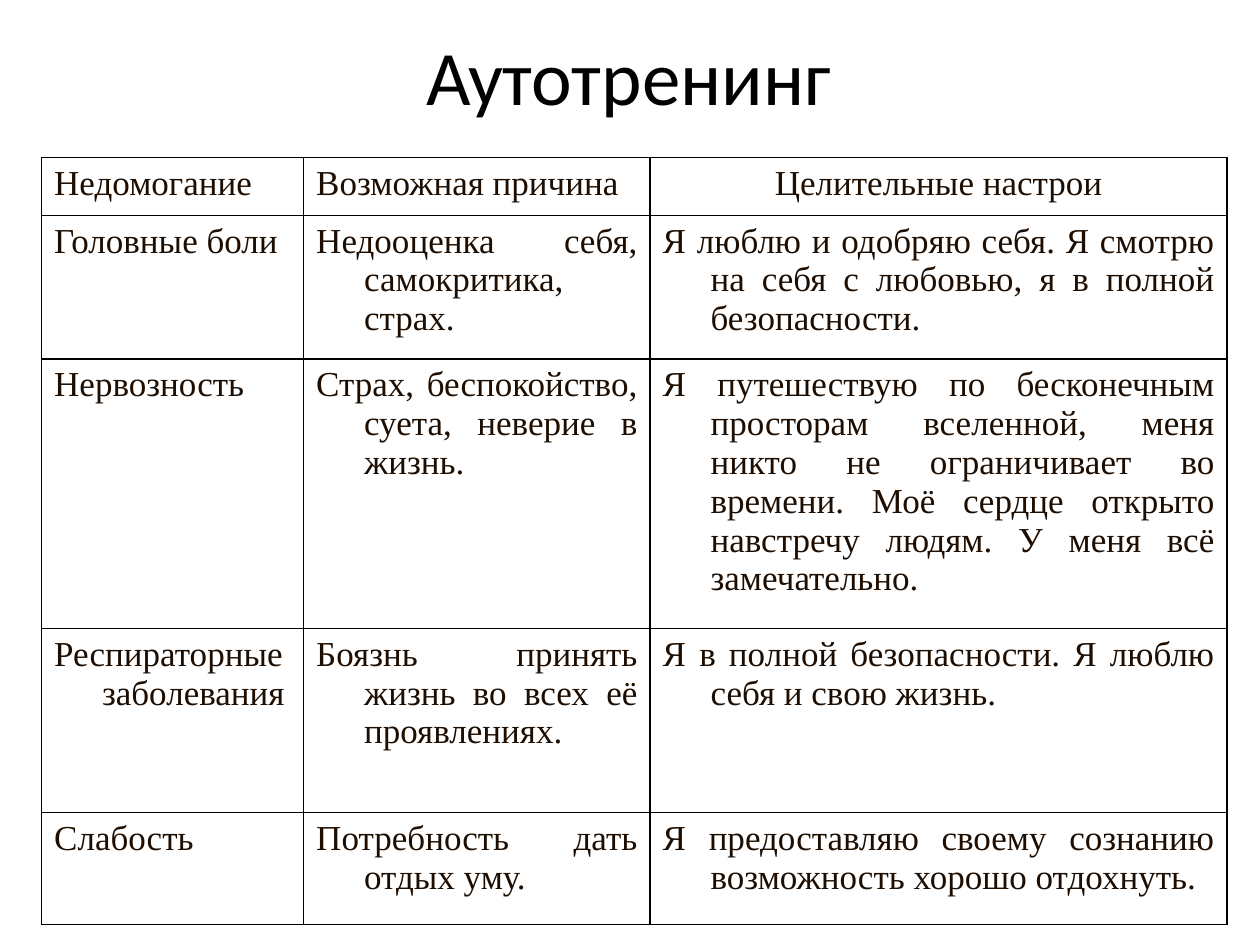
from typing import NamedTuple

from lxml.etree import SubElement
from pptx import Presentation
from pptx.dml.color import RGBColor
from pptx.enum.text import MSO_ANCHOR as Anchor, PP_ALIGN as Align
from pptx.oxml.ns import qn
from pptx.util import Inches, Pt

BLACK = RGBColor(0x00, 0x00, 0x00)
BROWN = RGBColor(0x1E, 0x0E, 0x01)
HANG = Inches(0.38)


class Row(NamedTuple):
    height: float
    ailment: str
    cause: str
    mantra: str


WIDTHS = (2.08, 2.75, 4.58)
ROWS = (
    Row(0.46, "Недомогание", "Возможная причина", "Целительные настрои"),
    Row(1.14, "Головные боли", "Недооценка себя, самокритика, страх.",
        "Я люблю и одобряю себя. Я смотрю на себя с любовью, "
        "я в полной безопасности."),
    Row(2.14, "Нервозность", "Страх, беспокойство, суета, неверие в жизнь.",
        "Я путешествую по бесконечным просторам вселенной, меня никто "
        "не ограничивает во времени. Моё сердце открыто навстречу людям. "
        "У меня всё замечательно."),
    Row(1.46, "Респираторные заболевания",
        "Боязнь принять жизнь во всех её проявлениях.",
        "Я в полной безопасности. Я люблю себя и свою жизнь."),
    Row(0.89, "Слабость", "Потребность дать отдых уму.",
        "Я предоставляю своему сознанию возможность хорошо отдохнуть."),
)


def style(par, name: str, size: int, color: RGBColor, align) -> None:
    par.alignment = align
    for run in par.runs:
        run.font.name = name
        run.font.size = Pt(size)
        run.font.color.rgb = color


def add_borders(cell) -> None:
    props = cell._tc.get_or_add_tcPr()
    for spot, side in enumerate(("lnL", "lnR", "lnT", "lnB")):
        line = SubElement(props, qn(f"a:{side}"), w=str(Pt(1)))
        fill = SubElement(line, qn("a:solidFill"))
        SubElement(fill, qn("a:srgbClr"), val=str(BLACK))
        props.insert(spot, line)  # borders come before the fill


def fill_cell(cell, text: str, align) -> None:
    cell.fill.background()
    add_borders(cell)
    cell.text_frame.text = text
    par = cell.text_frame.paragraphs[0]
    props = par._p.get_or_add_pPr()
    props.set("marL", str(HANG))
    props.set("indent", str(-HANG))
    style(par, "Times New Roman", 20, BROWN, align)


def add_grid(slide) -> None:
    table = slide.shapes.add_table(
        len(ROWS), len(WIDTHS), Inches(0.33), Inches(1.25),
        Inches(sum(WIDTHS)), Inches(sum(row.height for row in ROWS))).table
    table.first_row = table.horz_banding = False
    for col, width in zip(table.columns, WIDTHS):
        col.width = Inches(width)
    for r, row in enumerate(ROWS):
        table.rows[r].height = Inches(row.height)
        for c, text in enumerate(row[1:]):
            # Only the last heading is centred
            align = Align.CENTER if (r, c) == (0, 2) else Align.JUSTIFY
            fill_cell(table.cell(r, c), text, align)


def main() -> None:
    prs = Presentation()
    prs.slide_width, prs.slide_height = Inches(10), Inches(7.5)
    slide = prs.slides.add_slide(prs.slide_layouts[5])

    # Title
    title = slide.shapes.title
    title.left, title.top = Inches(0.48), Inches(0.11)
    title.width, title.height = Inches(9.02), Inches(0.97)
    title.text_frame.text = "Аутотренинг"
    title.text_frame.vertical_anchor = Anchor.MIDDLE
    style(title.text_frame.paragraphs[0], "Calibri", 44, BLACK, Align.CENTER)

    # Table of ailments
    add_grid(slide)
    prs.save("out.pptx")


if __name__ == "__main__":
    main()
